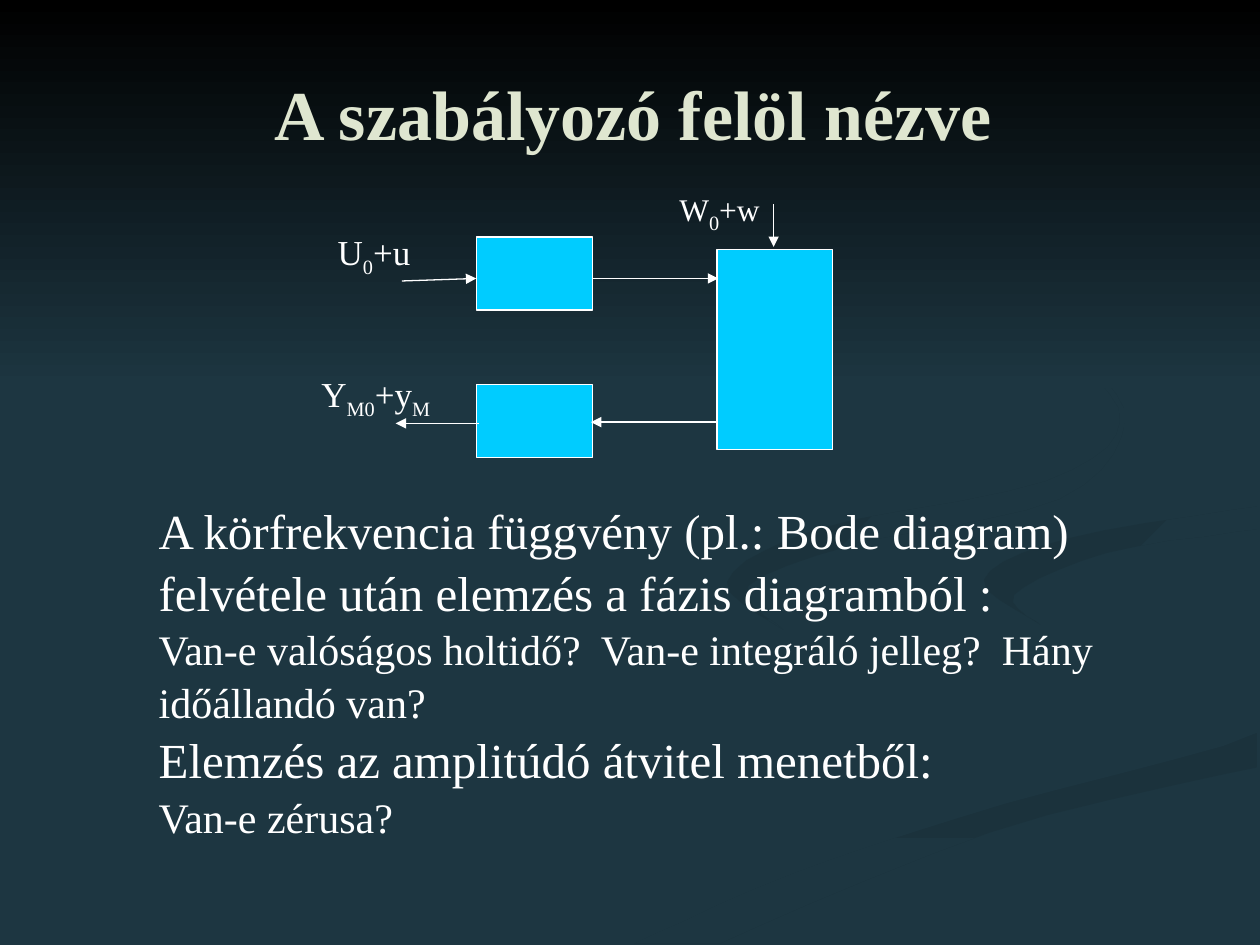
from pptx import Presentation
from pptx.dml.color import RGBColor
from pptx.enum.shapes import MSO_CONNECTOR as Conn, MSO_SHAPE as Kind
from pptx.enum.text import MSO_ANCHOR as Anchor, PP_ALIGN as Align
from pptx.oxml.ns import qn
from pptx.util import Pt
from lxml.etree import SubElement

PX = 9144  # one px is a hundredth of an inch
FONT = "Times New Roman"
BACK, WHITE, CYAN, CREAM = "1D3641", "FFFFFF", "00CCFF", "DFE6D0"
DARK, DIM = "1B323C", "1C343E"
STEPS = 5  # pieces of curve between two knots

# Ribbons: start colour, end colour, clockwise angle, knots of both edges
RIBBONS = [
    (BACK, DIM, 0,
     [(575, 459), (594, 491), (728, 535), (786, 566), (714, 605), (458, 674), (300, 749)],
     [(361, 749), (532, 674), (740, 618), (800, 581), (731, 533), (602, 490), (575, 459)]),
    (BACK, DIM, 45,
     [(724, 464), (758, 498), (870, 530), (943, 570), (894, 605)],
     [(894, 605), (918, 581), (854, 539), (746, 500), (724, 464)]),
    (DARK, BACK, 90,
     [(503, 749), (630, 693), (797, 638), (998, 581)],
     [(998, 609), (785, 661), (571, 749)]),
    (BACK, BACK, 0,
     [(477, 749), (663, 668), (892, 605), (943, 570), (851, 524), (725, 464),
      (770, 427), (999, 387)],
     [(999, 402), (835, 430), (786, 473), (866, 509), (999, 538), (999, 581),
      (797, 638), (630, 693), (503, 749)]),
    (DARK, BACK, 45,
     [(826, 496), (781, 460), (849, 427), (998, 402)],
     [(998, 420), (878, 439), (805, 472), (826, 496)]),
    (DARK, BACK, 45,
     [(762, 233), (854, 283), (893, 335), (841, 396), (683, 430)],
     [(683, 430), (594, 465), (622, 500)],
     [(622, 500), (577, 462), (649, 420), (830, 382), (889, 335), (846, 279), (762, 233)]),
    ("000000", BACK, 90, [(0, 0), (1000, 0)], [(1000, 308), (0, 308)]),
]

BLOCKS = [(378, 188, 92, 58), (569, 198, 92, 159), (378, 305, 92, 58)]
ARROWS = [(319, 223, 378, 221), (380, 336, 314, 336), (470, 221, 570, 221),
          (569, 335, 469, 335), (614, 162, 614, 196)]

# Labels: box, alignment, runs of (text, size, is subscript)
LABELS = [
    ((266, 183, 73, 33), Align.LEFT,
     [("U", 20, False), ("0", 20, True), ("+u", 20, False)]),
    ((253, 296, 110, 33), Align.LEFT,
     [("Y", 20, False), ("M0", 20, True), ("+y", 20, False), ("M", 20, True)]),
    ((532, 148, 73, 30), Align.RIGHT,
     [("W", 18, False), ("0", 20, True), ("+w", 18, False)]),
]
TITLE = "A szabályozó felöl nézve"
BODY = [
    ("A körfrekvencia függvény (pl.: Bode diagram) felvétele után elemzés "
     "a fázis diagramból :", 28),
    ("Van-e valóságos holtidő?  Van-e integráló jelleg?  Hány időállandó van?", 24),
    ("Elemzés az amplitúdó átvitel menetből:", 28),
    ("Van-e zérusa?", 24),
]


def emu(vals):
    return [v * PX for v in vals]


def rgb(code):
    return RGBColor.from_string(code)


def paint(fill, code):
    fill.solid()
    fill.fore_color.rgb = rgb(code)


def curve(knots):
    """Dots of a Catmull-Rom curve through the knots."""
    dots = [knots[0]]
    ends = [knots[0], *knots, knots[-1]]
    for quad in zip(ends, ends[1:], ends[2:], ends[3:]):
        for step in range(1, STEPS + 1):
            t = step / STEPS
            dots.append(tuple(
                b + t * (c - a + t * (2 * a - 5 * b + 4 * c - d
                                      + t * (3 * b - a - 3 * c + d))) / 2
                for a, b, c, d in zip(*quad)))
    return dots


def add_ribbon(start, end, angle, *edges):
    dots = [dot for edge in edges for dot in curve(edge)]
    pen = shapes.build_freeform(*dots[0], scale=PX)
    pen.add_line_segments(dots[1:], close=True)
    shape = pen.convert_to_shape()
    shape.shadow.inherit = False
    shape.line.fill.background()
    if start == end:
        paint(shape.fill, start)
        return
    shape.fill.gradient()
    shape.fill.gradient_angle = -angle % 360
    for stop, code in zip(shape.fill.gradient_stops, (start, end)):
        stop.color.rgb = rgb(code)


def add_block(box):
    shape = shapes.add_shape(Kind.RECTANGLE, *emu(box))
    shape.shadow.inherit = False
    paint(shape.fill, CYAN)
    shape.line.color.rgb = rgb(WHITE)
    shape.line.width = Pt(0.75)


def add_arrow(ends):
    wire = shapes.add_connector(Conn.STRAIGHT, *emu(ends))
    wire.line.color.rgb = rgb(WHITE)
    wire.line.width = Pt(0.75)
    SubElement(wire.line._get_or_add_ln(), qn("a:tailEnd"), type="triangle")
    SubElement(wire._element.spPr, qn("a:effectLst"))


def add_frame(box, side=0, wrap=True):
    frame = shapes.add_textbox(*emu(box)).text_frame
    frame.word_wrap = wrap
    frame.margin_left = frame.margin_right = side * PX
    frame.margin_top = frame.margin_bottom = 0
    return frame


def add_run(para, text, size, code=WHITE, bold=False):
    run = para.add_run()
    run.text = text
    font = run.font
    font.name, font.size, font.bold = FONT, Pt(size), bold
    font.color.rgb = rgb(code)
    return run


deck = Presentation()
deck.slide_width, deck.slide_height = emu((1000, 750))
slide = deck.slides.add_slide(deck.slide_layouts[6])
shapes = slide.shapes
paint(slide.background.fill, BACK)

for ribbon in RIBBONS:
    add_ribbon(*ribbon)

frame = add_frame((207, 51, 591, 77), wrap=False)
frame.vertical_anchor = Anchor.MIDDLE
frame.paragraphs[0].alignment = Align.CENTER
add_run(frame.paragraphs[0], TITLE, 40, CREAM, True)

for box in BLOCKS:
    add_block(box)
for ends in ARROWS:
    add_arrow(ends)

for box, align, runs in LABELS:
    para = add_frame(box, 2).paragraphs[0]
    para.alignment = align
    for text, size, sub in runs:
        run = add_run(para, text, size)
        if sub:
            run.font._element.set("baseline", "-25000")

frame = add_frame((126, 395, 793, 260))
for i, (text, size) in enumerate(BODY):
    para = frame.add_paragraph() if i else frame.paragraphs[0]
    para.line_spacing = 1.05
    add_run(para, text, size)

deck.save("out.pptx")
